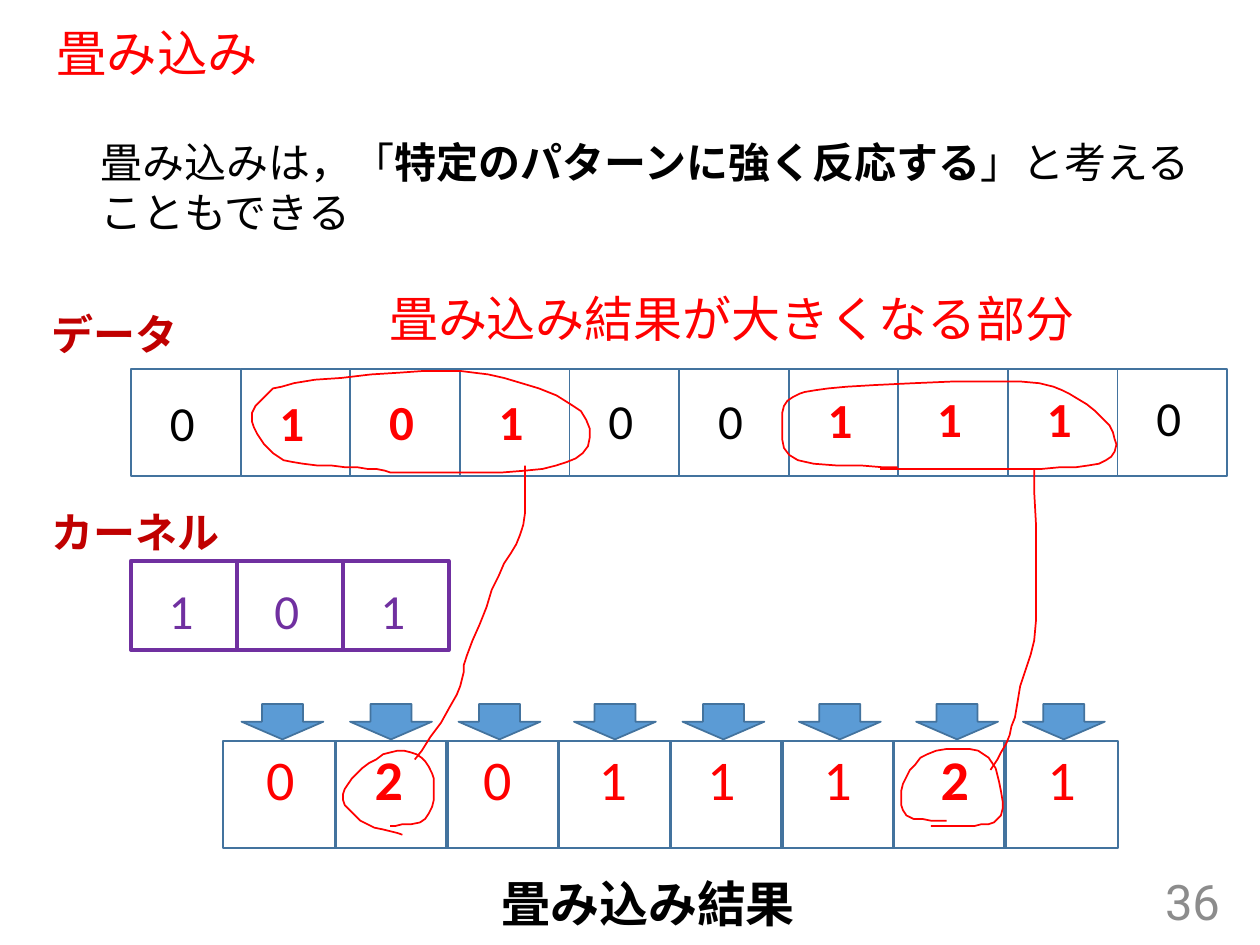
from dataclasses import dataclass

from pptx import Presentation
from pptx.dml.color import RGBColor
from pptx.enum import shapes, text
from pptx.util import Pt


@dataclass(frozen=True)
class Theme:
    red: str = "FF0000"
    dark: str = "C00000"
    black: str = "000000"
    gray: str = "8C8C8C"
    violet: str = "7030A0"
    blue: str = "5B9BD5"
    edge: str = "43739E"
    body: str = "Calibri"
    head: str = "Roboto"
    label: str = "Noto Sans CJK JP"
    small: float = 24
    mid: float = 28
    title: float = 28.8
    big: float = 32


@dataclass(frozen=True)
class Box:
    x: float
    y: float
    w: float
    h: float


@dataclass(frozen=True)
class Style:
    size: float
    color: str
    font: str = Theme.body
    bold: bool = False


@dataclass(frozen=True)
class Row:
    """A strip of equal cells, each one step right of the last."""
    box: Box
    step: float
    count: int
    color: str
    line: float


T = Theme()
DATA = Row(Box(74.9, 211, 62.64, 61.2), 62.64, 10, T.edge, 1)
KERNEL = Row(Box(74.9, 320.4, 60.48, 51.1), 60.48, 3, T.violet, 2.25)
OUTPUT = Row(Box(127.4, 423.4, 64.8, 61.2), 63.79, 8, T.edge, 1)
ARROWS = [138, 200, 262, 328, 390, 456.5, 523.5, 584.5]

# Pen strokes in points, smoothed when drawn
STROKES = [
    # ring around the first 2, and its tail
    [(230, 477), (210, 471), (196, 457), (204, 442), (223, 430), (241, 433),
     (248, 449), (243, 468), (223, 472)],
    [(300, 266), (299, 300), (285, 329), (267, 374), (261, 397), (237, 434)],
    # ring around 1 0 1
    [(226, 270), (204, 267), (167, 264), (151, 254), (144, 238), (150, 228),
     (168, 219), (242, 212), (288, 216), (332, 235), (333, 259), (300, 269),
     (226, 270)],
    # ring around 1 1 1
    [(513, 267), (456, 263), (447, 243), (453, 227), (484, 221), (583, 218),
     (616, 228), (636, 247), (632, 263), (595, 268), (503, 268)],
    # ring around the second 2, and its tail
    [(541, 469), (518, 466), (516, 448), (530, 431), (559, 429), (570, 443),
     (572, 466), (557, 472), (532, 472)],
    [(591, 268), (592, 355), (583, 392), (577, 420), (566, 440)],
]


def paint(item, color: str, line: float, fill: str | None = None) -> None:
    item.shadow.inherit = False
    item.line.color.rgb = RGBColor.from_string(color)
    item.line.width = Pt(line)
    if fill:
        item.fill.solid()
        item.fill.fore_color.rgb = RGBColor.from_string(fill)
    else:
        item.fill.background()


def shape(page, kind, box: Box, color: str, line: float, fill: str | None = None) -> None:
    item = page.shapes.add_shape(kind, Pt(box.x), Pt(box.y), Pt(box.w), Pt(box.h))
    paint(item, color, line, fill)


def cells(page, row: Row) -> None:
    b = row.box
    for i in range(row.count):
        shape(page, shapes.MSO_SHAPE.RECTANGLE,
              Box(b.x + i * row.step, b.y, b.w, b.h), row.color, row.line)


def write(page, words: str, box: Box, style: Style, wrap: bool = False, mid: bool = False):
    frame = page.shapes.add_textbox(Pt(box.x), Pt(box.y), Pt(box.w), Pt(box.h)).text_frame
    frame.word_wrap = wrap
    if mid:
        frame.vertical_anchor = text.MSO_ANCHOR.MIDDLE
    else:
        frame.auto_size = text.MSO_AUTO_SIZE.SHAPE_TO_FIT_TEXT
    frame.text = words
    for para in frame.paragraphs:
        font = para.font
        font.name, font.size, font.bold = style.font, Pt(style.size), style.bold
        font.color.rgb = RGBColor.from_string(style.color)
    return frame


def smooth(dots: list[tuple[float, float]], parts: int = 5) -> list[tuple[float, float]]:
    """Run a Catmull-Rom curve through the dots."""
    ends = [dots[0], *dots, dots[-1]]
    curve = [dots[0]]
    for quad in zip(ends, ends[1:], ends[2:], ends[3:]):
        for k in range(1, parts + 1):
            t = k / parts
            curve.append(tuple(
                b + t * (c - a) / 2 + t**2 * (a - 2.5 * b + 2 * c - d / 2)
                + t**3 * (3 * (b - c) + d - a) / 2
                for a, b, c, d in zip(*quad)))
    return curve


def stroke(page, dots: list[tuple[float, float]]) -> None:
    curve = smooth(dots)
    pen = page.shapes.build_freeform(*curve[0], scale=Pt(1))
    pen.add_line_segments(curve[1:], close=False)
    paint(pen.convert_to_shape(), T.red, 1)


def main() -> None:
    deck = Presentation()
    deck.slide_width, deck.slide_height = Pt(720), Pt(540)
    page = deck.slides.add_slide(deck.slide_layouts[6])

    # Title, page number and statement
    head = write(page, "畳み込み", Box(25.2, 13.7, 666, 36.7),
                 Style(T.title, T.red, T.head), True, True)
    head.paragraphs[0].line_spacing = 0.9
    num = write(page, "36", Box(542.2, 500.4, 162, 28.8),
                Style(T.mid, T.gray, T.head), True, True)
    num.paragraphs[0].alignment = text.PP_ALIGN.RIGHT
    lead = write(page, "畳み込みは，「\nこともできる", Box(50.4, 74.2, 644.4, 65.5),
                 Style(T.small, T.black))
    for words, bold in (("特定のパターンに強く反応する", True), ("」と考える", False)):
        run = lead.paragraphs[0].add_run()
        run.text, run.font.bold = words, bold

    # Kernel
    cells(page, KERNEL)
    for i, digit in enumerate("101"):
        write(page, digit, Box(89.3 + i * KERNEL.step, 328.3, 28.8, 41),
              Style(T.mid, T.violet))

    # Arrows and result digits
    for x, digit in zip(ARROWS, "02011121"):
        shape(page, shapes.MSO_SHAPE.DOWN_ARROW, Box(x, 402.3, 46.8, 20.2),
              T.edge, 1, T.blue)
        write(page, digit, Box(x + 7, 422, 33.1, 46.1),
              Style(T.big, T.red, bold=digit == "2"), True)

    # Data, with the matching parts in bold red
    cells(page, DATA)
    for i, digit in enumerate("0101001110"):
        hit = i in (1, 2, 3, 6, 7, 8)
        write(page, digit, Box(90 + i * DATA.step, 221 - i * 0.32, 28.8 if hit else 32.4, 41),
              Style(T.mid, T.red if hit else T.black, bold=hit))

    # Result cells and pen strokes
    cells(page, OUTPUT)
    for dots in STROKES:
        stroke(page, dots)

    # Captions
    tag = Style(T.small, T.dark, T.label, True)
    write(page, "畳み込み結果", Box(279.4, 495.4, 184.3, 41), Style(T.mid, T.black, bold=True))
    write(page, "畳み込み結果が大きくなる部分", Box(215.3, 161.3, 410.4, 41), Style(T.mid, T.red))
    write(page, "データ", Box(22.3, 172.8, 87.1, 36), tag)
    write(page, "カーネル", Box(22.3, 285.8, 111.6, 36), tag)

    deck.save("out.pptx")


if __name__ == "__main__":
    main()
